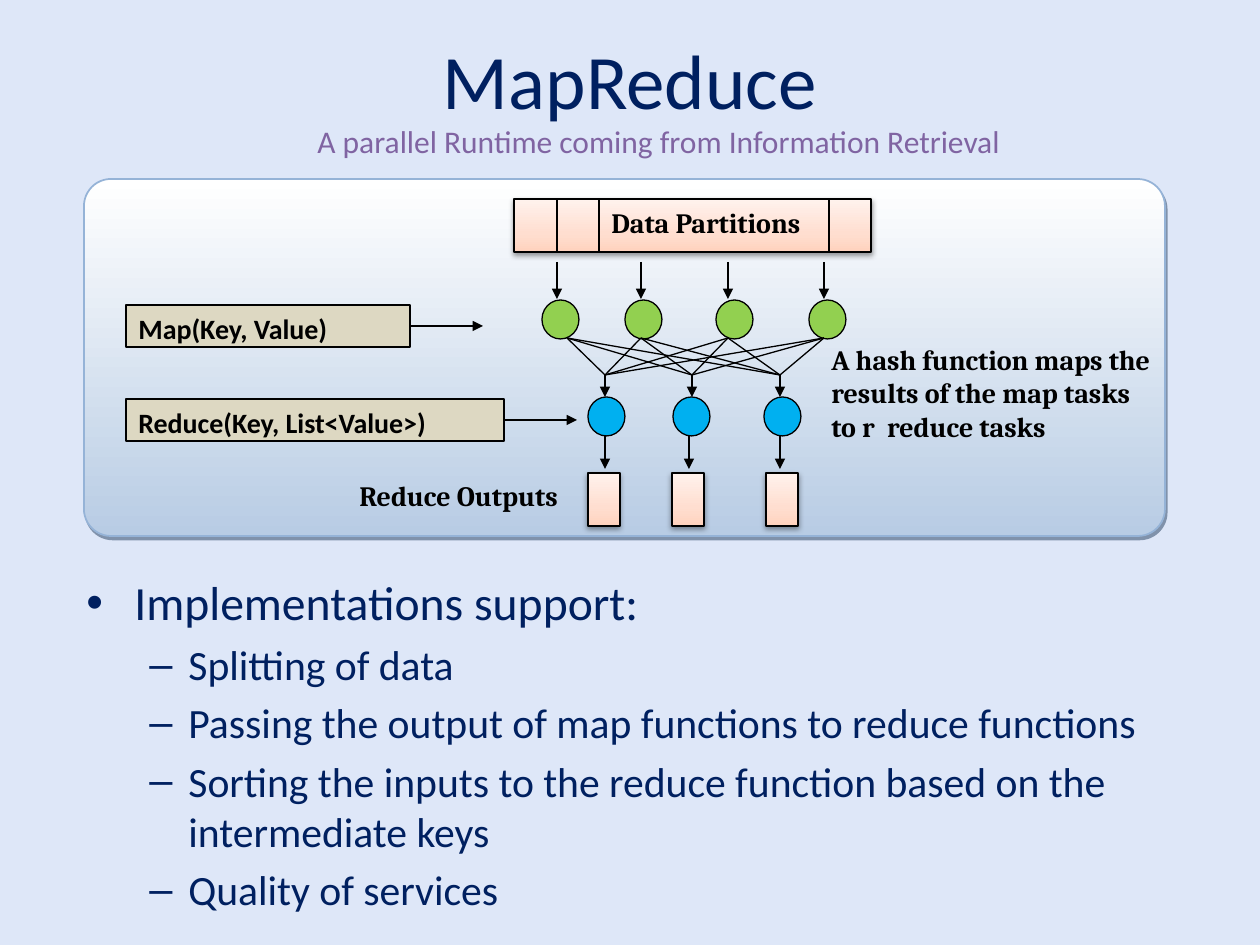
from copy import deepcopy
from pptx import Presentation
from pptx.dml.color import RGBColor
from pptx.enum.shapes import MSO_CONNECTOR, MSO_SHAPE
from pptx.enum.text import MSO_ANCHOR, PP_ALIGN
from pptx.oxml import parse_xml
from pptx.oxml.ns import nsdecls
from pptx.util import Pt

PX = 914400 / 126
INK = "000000"
NAVY = "002060"
PEACH = [(0, "FFD2BD"), (0.35, "FFDED0"), (1, "FFF2ED")]
rgb = RGBColor.from_string

deck = Presentation()
deck.slide_width = round(1260 * PX)
deck.slide_height = round(945 * PX)
slide = deck.slides.add_slide(deck.slide_layouts[6])
slide.background.fill.solid()
slide.background.fill.fore_color.rgb = rgb("DEE7F8")


def add_box(kind, box, stops, angle=0, edge=INK, width=0.75, shade=None):
    shape = slide.shapes.add_shape(kind, *[round(v * PX) for v in box])
    shape.shadow.inherit = False
    shape.line.color.rgb = rgb(edge)
    shape.line.width = Pt(width)
    if len(stops) == 1:
        shape.fill.solid()
        shape.fill.fore_color.rgb = rgb(stops[0][1])
    else:
        shape.fill.gradient()
        shape.fill.gradient_angle = angle
        first = shape._element.spPr.xpath(".//a:gs")[0]
        for _ in stops[2:]:
            first.addnext(deepcopy(first))
        for stop, (place, tone) in zip(shape.fill.gradient_stops, stops):
            stop.position = place
            stop.color.rgb = rgb(tone)
    if shade:
        tone, alpha, blur, dist, turn = shade
        shape._element.spPr.xpath("a:effectLst")[0].append(parse_xml(
            f'<a:outerShdw {nsdecls("a")} blurRad="{Pt(blur)}" dist="{Pt(dist)}" '
            f'dir="{turn * 60000}" algn="ctr" rotWithShape="0"><a:srgbClr val="{tone}">'
            f'<a:alpha val="{alpha * 1000}"/></a:srgbClr></a:outerShdw>'))
    return shape


def add_line(start, end, arrow=False):
    line = slide.shapes.add_connector(
        MSO_CONNECTOR.STRAIGHT, *[round(v * PX) for v in (*start, *end)])
    line.line.color.rgb = rgb(INK)
    line.line.width = Pt(0.75)
    if arrow:
        line.line._get_or_add_ln().append(
            parse_xml(f'<a:tailEnd {nsdecls("a")} type="triangle"/>'))
    line._element.spPr.append(parse_xml(f'<a:effectLst {nsdecls("a")}/>'))
    return line


panel = add_box(MSO_SHAPE.ROUNDED_RECTANGLE, (84, 179, 1081, 357),
                [(0, "FFFFFF"), (1, "B8CCE4")], 270, "95B3D7", 1,
                ("243F60", 50, 0, 2.2, 63))
panel.adjustments[0] = 0.076

for tone, top, lefts in [("92D050", 300, (542, 625, 716, 809)),
                         ("00B0F0", 397, (588, 673, 764))]:
    for left in lefts:
        add_box(MSO_SHAPE.OVAL, (left, top, 37, 39), [(0, tone)])

for label, top, width, end in [("Map(Key, Value)", 305, 284, 483),
                               ("Reduce(Key, List<Value>)", 399, 378, 577)]:
    step = add_box(MSO_SHAPE.RECTANGLE, (126, top, width, 42), [(0, "DDD8C2")])
    frame = step.text_frame
    frame.text = label
    frame.vertical_anchor = MSO_ANCHOR.TOP
    para = frame.paragraphs[0]
    para.alignment = PP_ALIGN.LEFT
    font = para.runs[0].font
    font.name, font.size, font.bold = "Calibri", Pt(16), True
    font.color.rgb = rgb(INK)
    add_line((126 + width, top + 21), (end, top + 21), True).begin_connect(step, 3)

for hub in (605, 692, 780):
    add_line((hub, 375), (hub, 397), True)
    for tip in (567, 641, 728, 824):
        add_line((tip, 338), (hub, 375))
for x in (557, 641, 728, 824):
    add_line((x, 262), (x, 299), True)
for x in (605, 689, 780):
    add_line((x, 436), (x, 469), True)

shade = (INK, 38, 3.1, 1.6, 90)
add_box(MSO_SHAPE.RECTANGLE, (514, 199, 357, 53), PEACH, 90, shade=shade)
for x in (557, 599, 829):
    add_line((x, 199), (x, 252))
for left in (588, 672, 766):
    add_box(MSO_SHAPE.RECTANGLE, (left, 473, 32, 53), PEACH, 90, shade=shade)

notes = [
    ("MapReduce", (63, 0, 1134, 158), "Calibri", 44, NAVY),
    ("A parallel Runtime coming from Information Retrieval",
     (305, 116, 723, 50), "Calibri", 18, "8064A2"),
    ("Data Partitions", (599, 199, 221, 53), "Cambria", 16, INK),
    ("Reduce Outputs", (347, 472, 231, 53), "Cambria", 16, INK),
    ("A hash function maps the results of the map tasks to r  reduce tasks",
     (819, 336, 347, 147), "Cambria", 16, INK),
]
for label, box, face, size, tone in notes:
    frame = slide.shapes.add_textbox(*[round(v * PX) for v in box]).text_frame
    frame.word_wrap = True
    frame.text = label
    para = frame.paragraphs[0]
    if size == 44:
        frame.vertical_anchor = MSO_ANCHOR.MIDDLE
        para.alignment = PP_ALIGN.CENTER
    font = para.runs[0].font
    font.name, font.size, font.bold = face, Pt(size), face == "Cambria"
    font.color.rgb = rgb(tone)

points = [
    (0, "Implementations support:"),
    (1, "Splitting of data"),
    (1, "Passing the output of map functions to reduce functions"),
    (1, "Sorting the inputs to the reduce function based on the intermediate keys"),
    (1, "Quality of services"),
]
frame = slide.shapes.add_textbox(
    *[round(v * PX) for v in (74, 567, 1113, 336)]).text_frame
frame.word_wrap = True
frame.text = "\n".join(label for _, label in points)
for para, (level, _) in zip(frame.paragraphs, points):
    mark, indent, hang, size = [("•", 48, 48, 27.2), ("–", 102, 39, 23.8)][level]
    para.level = level
    para.space_before = Pt(4.8)
    props = para._p.get_or_add_pPr()
    props.set("marL", str(round(indent * PX)))
    props.set("indent", str(round(-hang * PX)))
    props.append(parse_xml(f'<a:buFont {nsdecls("a")} typeface="Arial"/>'))
    props.append(parse_xml(f'<a:buChar {nsdecls("a")} char="{mark}"/>'))
    font = para.runs[0].font
    font.name, font.size = "Calibri", Pt(size)
    font.color.rgb = rgb(NAVY)

deck.save("out.pptx")
